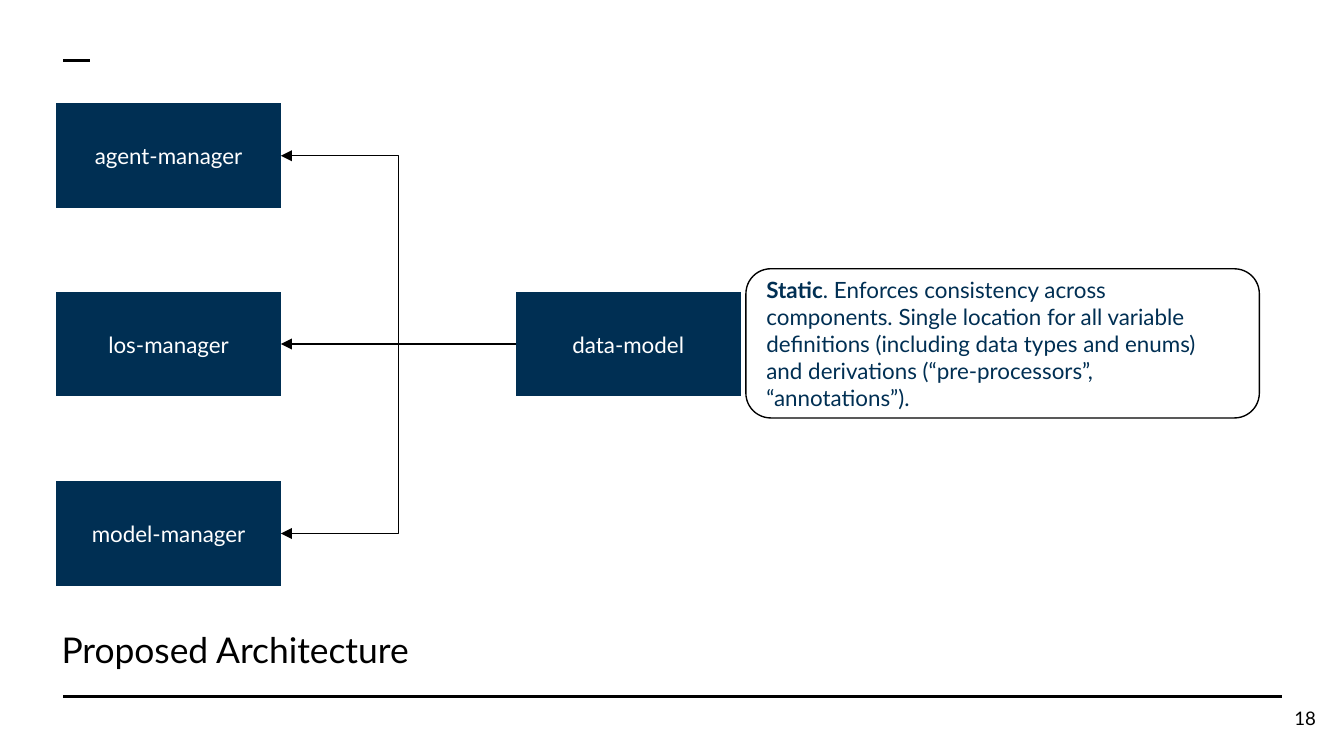
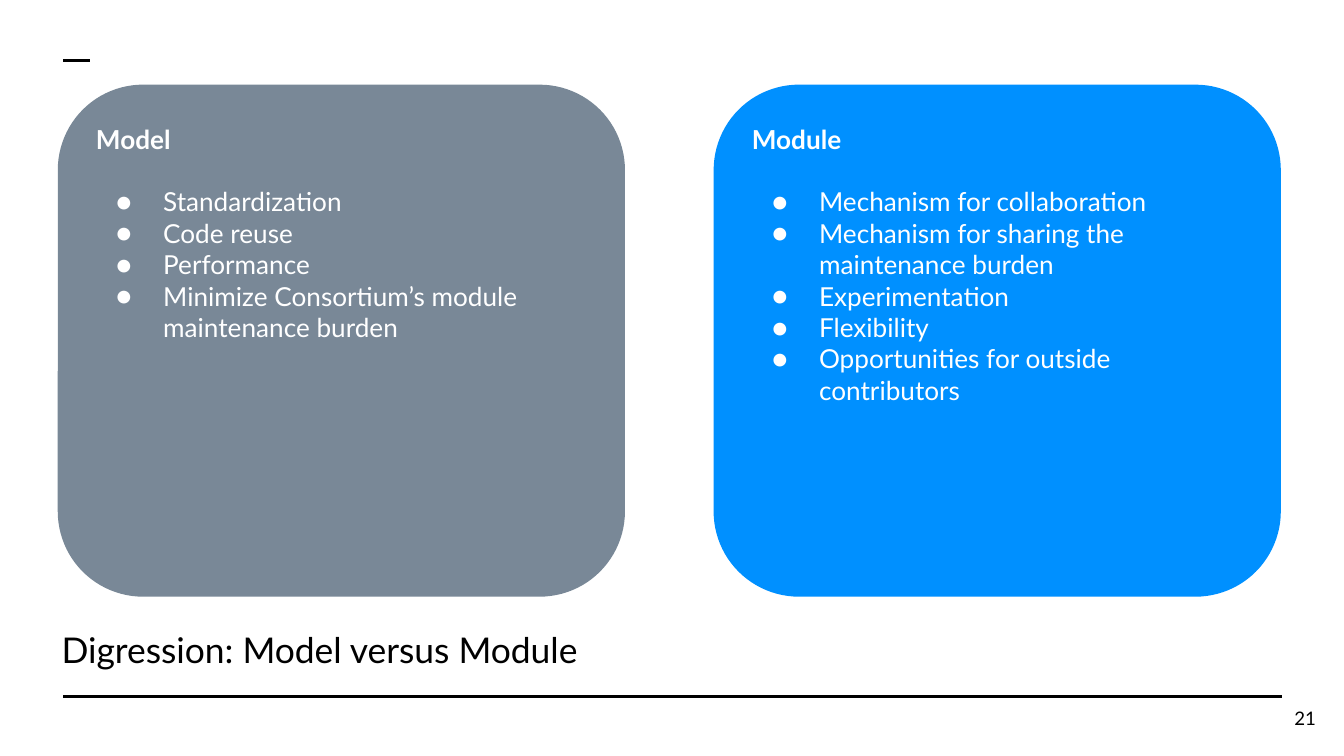
"""Build two slides: a proposed architecture and a comparison of model and module."""
from dataclasses import dataclass
from typing import Optional

from lxml import etree
from pptx import Presentation
from pptx.dml.color import RGBColor
from pptx.enum.shapes import MSO_CONNECTOR, MSO_SHAPE
from pptx.enum.text import MSO_ANCHOR, PP_ALIGN
from pptx.oxml.ns import qn
from pptx.shapes.autoshape import Shape
from pptx.shapes.connector import Connector
from pptx.slide import Slide
from pptx.text.text import TextFrame
from pptx.util import Inches, Pt

BLACK = RGBColor(0x00, 0x00, 0x00)
WHITE = RGBColor(0xFF, 0xFF, 0xFF)
NAVY = RGBColor(0x00, 0x2F, 0x53)
SLATE = RGBColor(0x79, 0x88, 0x97)
AZURE = RGBColor(0x00, 0x90, 0xFF)

STRAIGHT, ELBOW = MSO_CONNECTOR.STRAIGHT, MSO_CONNECTOR.ELBOW
PROCESS, ROUNDED = MSO_SHAPE.FLOWCHART_PROCESS, MSO_SHAPE.ROUNDED_RECTANGLE
TOP, MIDDLE = MSO_ANCHOR.TOP, MSO_ANCHOR.MIDDLE
LEFT, CENTER, RIGHT = PP_ALIGN.LEFT, PP_ALIGN.CENTER, PP_ALIGN.RIGHT
LEFT_SITE, RIGHT_SITE = 1, 3

FONT = "Lato"
BLANK_LAYOUT = 6
PAGE_WIDTH = 10
PAGE_HEIGHT = PAGE_WIDTH * 9 / 16
RULE_LEFT = 0.47
RULES = ((9.54, 5.18), (0.67, 0.45))
MANAGER_LEFT = 0.42
BOX_WIDTH, BOX_HEIGHT = 1.67, 0.78
PANEL_TOP, PANEL_WIDTH, PANEL_HEIGHT = 0.63, 4.22, 3.81


@dataclass(frozen=True)
class Area:
    """A place on the slide, in inches."""

    left: float
    top: float
    width: float
    height: float

    def lengths(self) -> tuple:
        """Return the four measures as lengths."""
        return tuple(map(Inches, (self.left, self.top, self.width, self.height)))


@dataclass(frozen=True)
class Style:
    """The look of a text."""

    size: float
    color: RGBColor
    align: PP_ALIGN = LEFT
    anchor: MSO_ANCHOR = MIDDLE


@dataclass(frozen=True)
class Manager:
    """A component that uses the data model."""

    name: str
    top: float


@dataclass(frozen=True)
class Panel:
    """A rounded panel with a heading and bullets."""

    left: float
    fill: RGBColor
    heading: str
    bullets: tuple


TITLE_AREA = Area(0.36, 4.62, 9.17, 0.43)
NUMBER_AREA = Area(9.29, 5.13, 0.6, 0.43)
NOTE_AREA = Area(5.55, 2, 3.82, 1.11)

TITLE_STYLE = Style(19, BLACK)
NUMBER_STYLE = Style(10, BLACK, RIGHT)
BOX_STYLE = Style(12, WHITE, CENTER)
NOTE_STYLE = Style(12, NAVY)
PANEL_STYLE = Style(14, WHITE, anchor=TOP)

MANAGERS = (
    Manager("agent-manager", 0.77),
    Manager("los-manager", 2.17),
    Manager("model-manager", 3.58),
)
NOTE = (
    ". Enforces consistency across components. Single location for all variable "
    "definitions (including data types and enums) and derivations "
    "(“pre-processors”, “annotations”)."
)
PANELS = (
    Panel(0.43, SLATE, "Model", (
        "Standardization",
        "Code reuse",
        "Performance",
        "Minimize Consortium’s module maintenance burden",
    )),
    Panel(5.31, AZURE, "Module", (
        "Mechanism for collaboration",
        "Mechanism for sharing the maintenance burden",
        "Experimentation",
        "Flexibility",
        "Opportunities for outside contributors",
    )),
)


def assign(target: object, values: dict) -> None:
    """Set each named attribute of the target."""
    for name, value in values.items():
        setattr(target, name, value)


def prepare_frame(frame: TextFrame, style: Style) -> None:
    """Set wrapping, anchor and insets."""
    margins = ("margin_left", "margin_top", "margin_right", "margin_bottom")
    assign(frame, {"word_wrap": True, "vertical_anchor": style.anchor,
                   **dict.fromkeys(margins, Inches(0.1))})


def write(para, text: str, style: Style, bold: bool = False) -> None:
    """Add a span of text to a paragraph."""
    para.alignment = style.align
    span = para.add_run()
    span.text = text
    assign(span.font, {"name": FONT, "size": Pt(style.size), "bold": bold})
    span.font.color.rgb = style.color


def add_bullet(para, color: RGBColor) -> None:
    """Give a paragraph a hanging round bullet."""
    properties = para._p.get_or_add_pPr()
    properties.set("marL", str(Inches(0.5)))
    properties.set("indent", str(Inches(-0.35)))
    bullet_color = etree.SubElement(properties, qn("a:buClr"))
    etree.SubElement(bullet_color, qn("a:srgbClr"), val=str(color))
    etree.SubElement(properties, qn("a:buFont"), typeface=FONT)
    etree.SubElement(properties, qn("a:buChar"), char="●")


def add_label(page: Slide, area: Area, text: str, style: Style) -> None:
    """Add a text box with one line."""
    frame = page.shapes.add_textbox(*area.lengths()).text_frame
    prepare_frame(frame, style)
    write(frame.paragraphs[0], text, style)


def add_box(page: Slide, kind: MSO_SHAPE, area: Area, fill: RGBColor,
            style: Style, outline: Optional[RGBColor] = None) -> Shape:
    """Add a filled shape ready for text."""
    box = page.shapes.add_shape(kind, *area.lengths())
    box.shadow.inherit = False
    box.fill.solid()
    box.fill.fore_color.rgb = fill
    if outline is None:
        box.line.fill.background()
    else:
        box.line.color.rgb = outline
        box.line.width = Pt(0.75)
    prepare_frame(box.text_frame, style)
    return box


def style_line(line: Connector, width: float) -> None:
    """Make a connector plain black."""
    line.line.color.rgb = BLACK
    line.line.width = Pt(width)
    etree.SubElement(line._element.spPr, qn("a:effectLst"))


def add_rule(page: Slide, right: float, height: float) -> None:
    """Add a horizontal rule from the left margin."""
    ends = map(Inches, (RULE_LEFT, height, right, height))
    style_line(page.shapes.add_connector(STRAIGHT, *ends), 1.5)


def add_arrow(page: Slide, source: Shape, target: Shape) -> None:
    """Join the left of the source to the right of the target."""
    arrow = page.shapes.add_connector(ELBOW, 0, 0, 0, 0)
    arrow.begin_connect(source, LEFT_SITE)
    arrow.end_connect(target, RIGHT_SITE)
    style_line(arrow, 0.75)
    etree.SubElement(arrow.line._get_or_add_ln(), qn("a:tailEnd"), type="triangle")


def add_component(page: Slide, left: float, top: float, name: str) -> Shape:
    """Add a named component box."""
    area = Area(left, top, BOX_WIDTH, BOX_HEIGHT)
    box = add_box(page, PROCESS, area, NAVY, BOX_STYLE)
    write(box.text_frame.paragraphs[0], name, BOX_STYLE)
    return box


def add_panel(page: Slide, panel: Panel) -> None:
    """Add a panel with its heading and bullets."""
    area = Area(panel.left, PANEL_TOP, PANEL_WIDTH, PANEL_HEIGHT)
    frame = add_box(page, ROUNDED, area, panel.fill, PANEL_STYLE).text_frame
    heading = frame.paragraphs[0]
    heading.space_after = Pt(16.8)
    write(heading, panel.heading, PANEL_STYLE, bold=True)
    for text in panel.bullets:
        para = frame.add_paragraph()
        write(para, text, PANEL_STYLE)
        add_bullet(para, PANEL_STYLE.color)


def add_page(deck, title: str, number: int) -> Slide:
    """Add a slide with rules, title and number."""
    page = deck.slides.add_slide(deck.slide_layouts[BLANK_LAYOUT])
    for right, height in RULES:
        add_rule(page, right, height)
    add_label(page, TITLE_AREA, title, TITLE_STYLE)
    add_label(page, NUMBER_AREA, str(number), NUMBER_STYLE)
    return page


def build_architecture(deck) -> None:
    """Build the architecture slide."""
    page = add_page(deck, "Proposed Architecture", 18)
    managers = [add_component(page, MANAGER_LEFT, manager.top, manager.name)
                for manager in MANAGERS]
    data_model = add_component(page, 3.84, 2.17, "data-model")
    note = add_box(page, ROUNDED, NOTE_AREA, WHITE, NOTE_STYLE, BLACK)
    note.text_frame.margin_right = Inches(0.15)
    para = note.text_frame.paragraphs[0]
    write(para, "Static", NOTE_STYLE, bold=True)
    write(para, NOTE, NOTE_STYLE)
    for manager in managers:
        add_arrow(page, data_model, manager)


def build_comparison(deck) -> None:
    """Build the comparison slide."""
    page = add_page(deck, "Digression: Model versus Module", 21)
    for panel in PANELS:
        add_panel(page, panel)


def main() -> None:
    """Build and save the deck."""
    deck = Presentation()
    assign(deck, {"slide_width": Inches(PAGE_WIDTH),
                  "slide_height": Inches(PAGE_HEIGHT)})
    build_architecture(deck)
    build_comparison(deck)
    deck.save("out.pptx")


if __name__ == "__main__":
    main()
